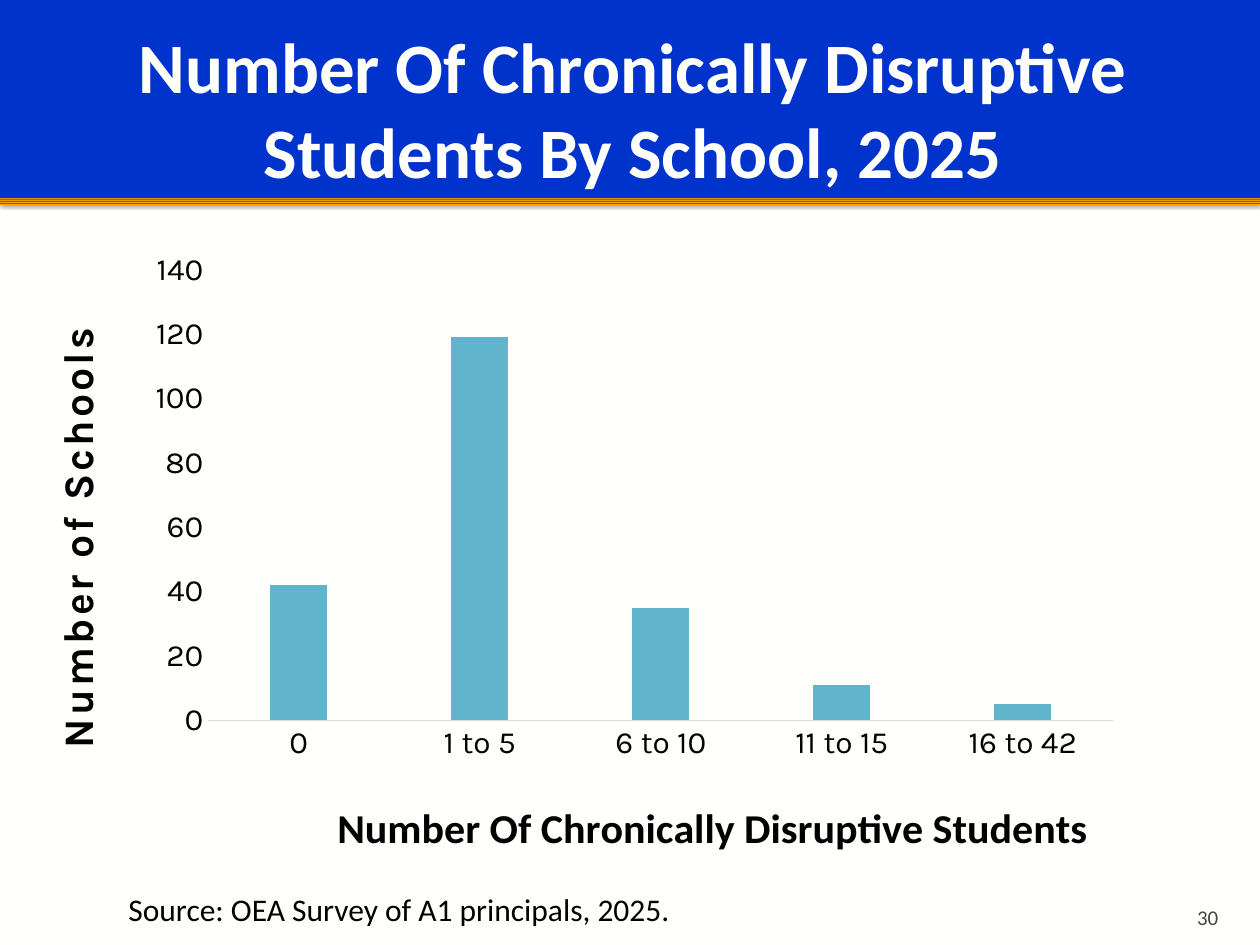
"""Build a slide with a column chart of chronically disruptive students by school."""
from dataclasses import dataclass

import pptx
import pptx.chart.data
import pptx.dml.color
import pptx.enum.chart
import pptx.enum.shapes
import pptx.enum.text
import pptx.oxml
import pptx.oxml.ns
import pptx.util
from pptx.util import Cm

ALIGN = pptx.enum.text.PP_ALIGN
ANCHOR = pptx.enum.text.MSO_ANCHOR
NO_TICKS = pptx.enum.chart.XL_TICK_MARK.NONE
PAPER, BLUE, BLACK, GREY = "FFFFFB", "0033CC", "000000", "454545"
BROWN, AMBER, TEAL, AXIS_GREY = "825600", "FFA800", "60B5CC", "D9D9D9"
STRIPE_STOPS = (0, 13, 28, 43, 58, 72, 87, 100)


@dataclass
class Box:
    """Position and size in centimetres."""
    left: float
    top: float
    width: float
    height: float

    def lengths(self) -> tuple:
        return Cm(self.left), Cm(self.top), Cm(self.width), Cm(self.height)


@dataclass
class AxisStyle:
    """Title text, title font and title place (fractions of the chart) of one axis."""
    title: str
    font: str
    left: float
    top: float
    spacing: int = 0


def color(value: str) -> pptx.dml.color.RGBColor:
    return pptx.dml.color.RGBColor.from_string(value)


def fill_solid(fill, value: str) -> None:
    fill.solid()
    fill.fore_color.rgb = color(value)


def set_font(font, name: str, size: float, value: str, bold: bool = False) -> None:
    font.name, font.size, font.bold = name, pptx.util.Pt(size), bold
    font.color.rgb = color(value)


def add_text(slide, text: str, box: Box, *, size: float, value: str = BLACK, bold: bool = False,
             align=ALIGN.LEFT, anchor=ANCHOR.TOP, right: float = 0.25, bottom: float = 0.13) -> None:
    frame = slide.shapes.add_textbox(*box.lengths()).text_frame
    frame.word_wrap, frame.vertical_anchor = True, anchor
    frame.margin_left, frame.margin_top = Cm(0.25), Cm(0.13)
    frame.margin_right, frame.margin_bottom = Cm(right), Cm(bottom)
    paragraph = frame.paragraphs[0]
    paragraph.alignment = align
    for index, line in enumerate(text.split("\n")):
        if index:
            paragraph.add_line_break()
        run = paragraph.add_run()
        run.text = line
        set_font(run.font, "Calibri", size, value, bold)


def add_band(slide, box: Box):
    band = slide.shapes.add_shape(pptx.enum.shapes.MSO_SHAPE.RECTANGLE, *box.lengths())
    band.shadow.inherit = False
    band.line.fill.background()
    return band


def add_striped_band(slide, box: Box) -> None:
    properties = add_band(slide, box).element.spPr
    namespace = pptx.oxml.ns.nsdecls("a")
    stops = "".join(
        f'<a:gs pos="{stop * 1000}"><a:srgbClr val="{(BROWN, AMBER)[index % 2]}"/></a:gs>'
        for index, stop in enumerate(STRIPE_STOPS))
    properties.find(pptx.oxml.ns.qn("a:prstGeom")).addnext(pptx.oxml.parse_xml(
        f'<a:gradFill {namespace}><a:gsLst>{stops}</a:gsLst><a:lin ang="5400000"/></a:gradFill>'))
    properties.find(pptx.oxml.ns.qn("a:effectLst")).append(pptx.oxml.parse_xml(
        f'<a:outerShdw {namespace} blurRad="31750" dist="10160" dir="5400000">'
        '<a:srgbClr val="000000"><a:alpha val="60000"/></a:srgbClr></a:outerShdw>'))


def manual_layout(**values):
    parts = "".join(f'<c:{name} val="{value}"/>' for name, value in values.items())
    return pptx.oxml.parse_xml(
        f'<c:layout {pptx.oxml.ns.nsdecls("c")}><c:manualLayout>{parts}</c:manualLayout></c:layout>')


def replace_layout(parent, layout, after: str = "") -> None:
    old = parent.find(pptx.oxml.ns.qn("c:layout"))
    if old is not None:
        parent.remove(old)
    if after:
        parent.find(pptx.oxml.ns.qn(after)).addnext(layout)
    else:
        parent.insert(0, layout)


def style_axis(axis, style: AxisStyle) -> None:
    axis.has_major_gridlines = False
    axis.major_tick_mark = axis.minor_tick_mark = NO_TICKS
    set_font(axis.tick_labels.font, "Karla", 18, BLACK)
    title = axis.axis_title
    run = title.text_frame.paragraphs[0].add_run()
    run.text = style.title
    set_font(run.font, style.font, 24, BLACK, True)
    if style.spacing:
        run.font._element.set("spc", str(style.spacing))
    layout = manual_layout(xMode="edge", yMode="edge", x=style.left, y=style.top)
    replace_layout(title._element, layout, "c:tx")


def add_school_chart(slide, box: Box) -> None:
    data = pptx.chart.data.CategoryChartData()
    data.categories = ["0", "1 to 5", "6 to 10", "11 to 15", "16 to 42"]
    data.add_series("Series 1", [42, 119, 35, 11, 5])
    chart = slide.shapes.add_chart(
        pptx.enum.chart.XL_CHART_TYPE.COLUMN_CLUSTERED, *box.lengths(), data).chart
    chart.has_title = chart.has_legend = False
    set_font(chart.font, "Karla", 12, BLACK)
    plot = chart.plots[0]
    plot.vary_by_categories, plot.gap_width, plot.overlap = False, 219, -27
    fill_solid(plot.series[0].format.fill, TEAL)

    style_axis(chart.category_axis,
               AxisStyle("Number Of Chronically Disruptive Students", "Calibri", 0.27, 0.9))
    style_axis(chart.value_axis, AxisStyle("Number of Schools", "Karla", 0.01, 0.13, 150))
    chart.category_axis.format.line.color.rgb = color(AXIS_GREY)
    chart.category_axis.format.line.width = pptx.util.Pt(0.75)
    chart.value_axis.format.line.fill.background()
    chart.value_axis.minimum_scale, chart.value_axis.maximum_scale = 0, 140
    chart.value_axis.major_unit = 20
    body = chart.value_axis.axis_title.text_frame._txBody.bodyPr
    body.set("rot", "-5400000")
    body.set("vert", "horz")
    layout = manual_layout(layoutTarget="inner", xMode="edge", yMode="edge",
                           x=0.16, y=0.03, w=0.82, h=0.75)
    replace_layout(chart._chartSpace.chart.plotArea, layout)


def main() -> None:
    presentation = pptx.Presentation()
    presentation.slide_width, presentation.slide_height = Cm(25.4), Cm(19.05)
    slide = presentation.slides.add_slide(presentation.slide_layouts[6])
    fill_solid(slide.background.fill, PAPER)
    add_striped_band(slide, Box(0, 3.99, 25.4, 0.13))
    fill_solid(add_band(slide, Box(0, 0, 25.4, 3.99)).fill, BLUE)
    add_text(slide, "Number Of Chronically Disruptive\nStudents By School, 2025",
             Box(1.27, 0.43, 22.86, 3.48), size=40.5, value=PAPER, bold=True,
             align=ALIGN.CENTER, anchor=ANCHOR.MIDDLE, right=0.13)
    add_text(slide, "30", Box(22.78, 17.98, 2.03, 0.76), size=12, value=GREY,
             align=ALIGN.RIGHT, anchor=ANCHOR.BOTTOM, bottom=0)
    add_school_chart(slide, Box(0.64, 5.08, 22.25, 12.4))
    add_text(slide, "Source: OEA Survey of A1 principals, 2025.",
             Box(2.34, 17.81, 12.83, 1.02), size=18)
    presentation.save("out.pptx")


if __name__ == "__main__":
    main()
